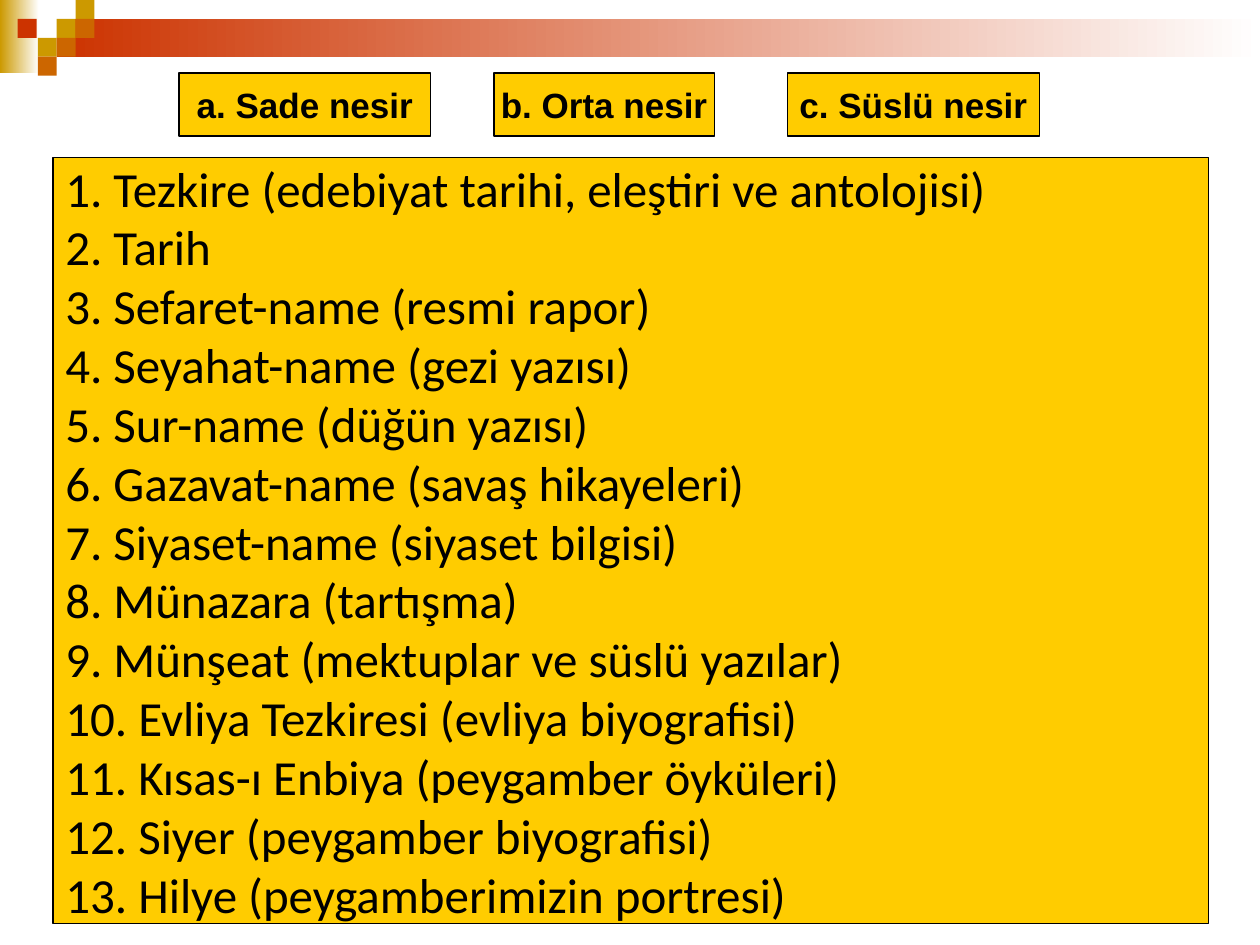
from dataclasses import dataclass

from pptx import Presentation
from pptx import util as u
from pptx.dml.color import RGBColor
from pptx.enum import shapes, text


@dataclass(frozen=True)
class Theme:
    """Colours, fonts and type sizes of the slide."""
    gold: str = "CC9900"
    orange: str = "CC6600"
    red: str = "CC3300"
    yellow: str = "FFCC00"
    white: str = "FFFFFF"
    black: str = "000000"
    heading_font: str = "Arial"
    list_font: str = "Calibri"
    heading_size: int = 20
    list_size: int = 28
    line_width: float = 0.75


THEME = Theme()
TILE = 0.15
TILES = [
    (0.45, 0.15, THEME.gold),
    (0.6, 0, THEME.gold),
    (0.6, 0.15, THEME.orange),
    (0.3, 0.3, THEME.gold),
    (0.14, 0.15, THEME.red),
    (0.45, 0.3, THEME.orange),
    (0.3, 0.45, THEME.orange),
]
PROSE_STYLES = [
    (1.42, 2, "a. Sade nesir"),
    (3.92, 1.75, "b. Orta nesir"),
    (6.25, 2, "c. Süslü nesir"),
]
GENRES = [
    "Tezkire (edebiyat tarihi, eleştiri ve antolojisi)",
    "Tarih",
    "Sefaret-name (resmi rapor)",
    "Seyahat-name (gezi yazısı)",
    "Sur-name (düğün yazısı)",
    "Gazavat-name (savaş hikayeleri)",
    "Siyaset-name (siyaset bilgisi)",
    "Münazara (tartışma)",
    "Münşeat (mektuplar ve süslü yazılar)",
    "Evliya Tezkiresi (evliya biyografisi)",
    "Kısas-ı Enbiya (peygamber öyküleri)",
    "Siyer (peygamber biyografisi)",
    "Hilye (peygamberimizin portresi)",
]


def add_rectangle(slide, left, top, width, height):
    """Add a rectangle without shadow or outline."""
    shape = slide.shapes.add_shape(
        shapes.MSO_SHAPE.RECTANGLE, *map(u.Inches, (left, top, width, height)))
    shape.shadow.inherit = False
    shape.line.fill.background()
    return shape


def fill_solid(shape, colour):
    """Fill a shape with one colour."""
    shape.fill.solid()
    shape.fill.fore_color.rgb = RGBColor.from_string(colour)


def add_fade(slide, left, top, width, height, colour):
    """Add a band that fades from a colour to white, left to right."""
    shape = add_rectangle(slide, left, top, width, height)
    shape.fill.gradient()
    shape.fill.gradient_angle = 0
    for stop, position, stop_colour in zip(
            shape.fill.gradient_stops, (0, 1), (colour, THEME.white)):
        stop.position = position
        stop.color.rgb = RGBColor.from_string(stop_colour)


def add_text_panel(slide, box, lines, font, size, bold, alignment):
    """Add an outlined yellow panel with one paragraph per line."""
    shape = add_rectangle(slide, *box)
    fill_solid(shape, THEME.yellow)
    shape.line.color.rgb = RGBColor.from_string(THEME.black)
    shape.line.width = u.Pt(THEME.line_width)
    frame = shape.text_frame
    frame.word_wrap = False
    frame.vertical_anchor = text.MSO_ANCHOR.MIDDLE
    frame.text = "\n".join(lines)
    for paragraph in frame.paragraphs:
        paragraph.alignment = alignment
        paragraph.font.name = font
        paragraph.font.size = u.Pt(size)
        paragraph.font.bold = bold
        paragraph.font.color.rgb = RGBColor.from_string(THEME.black)


def add_decoration(slide):
    """Add the fading bands and the mosaic of tiles at the top."""
    add_fade(slide, 0, 0, 0.31, 0.58, THEME.gold)
    add_fade(slide, 0.45, 0.15, 9.55, 0.3, THEME.red)
    for left, top, colour in TILES:
        fill_solid(add_rectangle(slide, left, top, TILE, TILE), colour)


def main():
    """Build the slide and save it."""
    presentation = Presentation()
    presentation.slide_width = u.Inches(10)
    presentation.slide_height = u.Inches(7.5)
    slide = presentation.slides.add_slide(presentation.slide_layouts[6])
    add_decoration(slide)
    for left, width, label in PROSE_STYLES:
        add_text_panel(slide, (left, 0.58, width, 0.5), [label],
                       THEME.heading_font, THEME.heading_size, True,
                       text.PP_ALIGN.CENTER)
    numbered = [f"{number}. {genre}" for number, genre in enumerate(GENRES, 1)]
    add_text_panel(slide, (0.42, 1.25, 9.17, 6.08), numbered,
                   THEME.list_font, THEME.list_size, False,
                   text.PP_ALIGN.LEFT)
    presentation.save("out.pptx")


if __name__ == "__main__":
    main()
